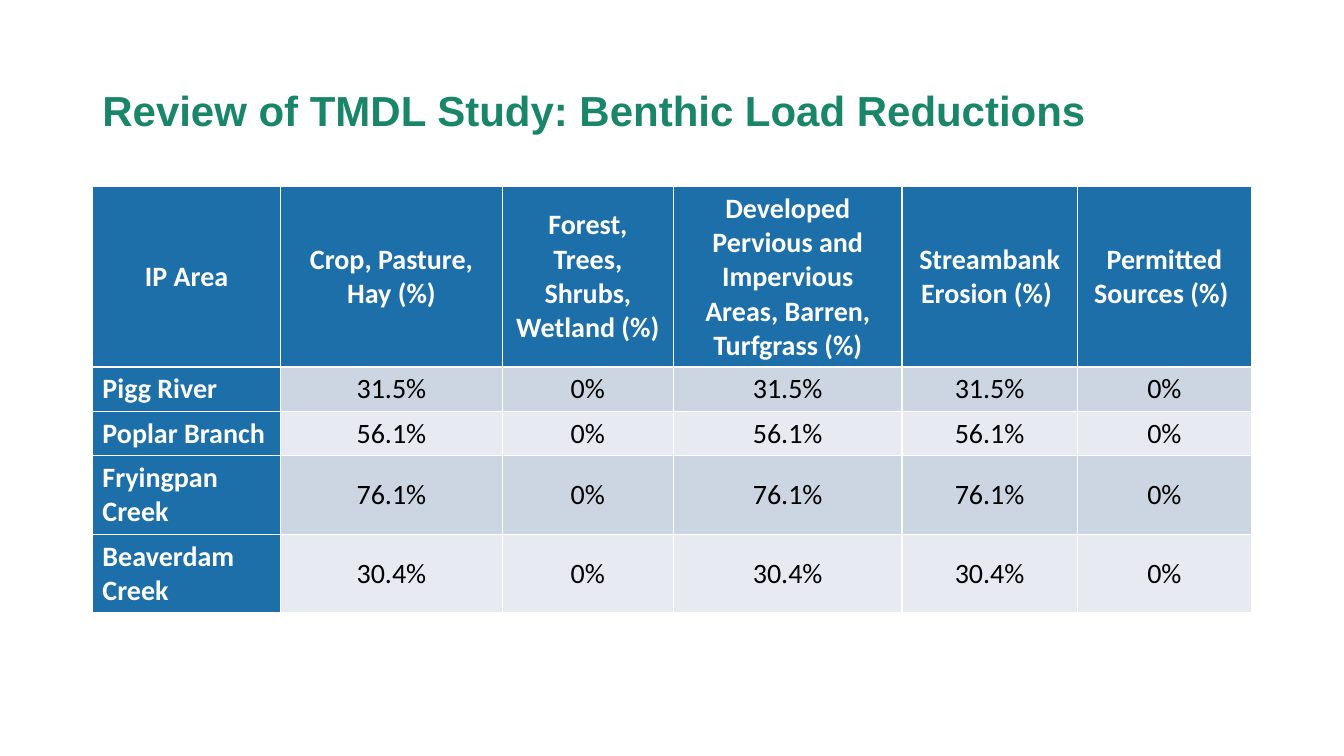
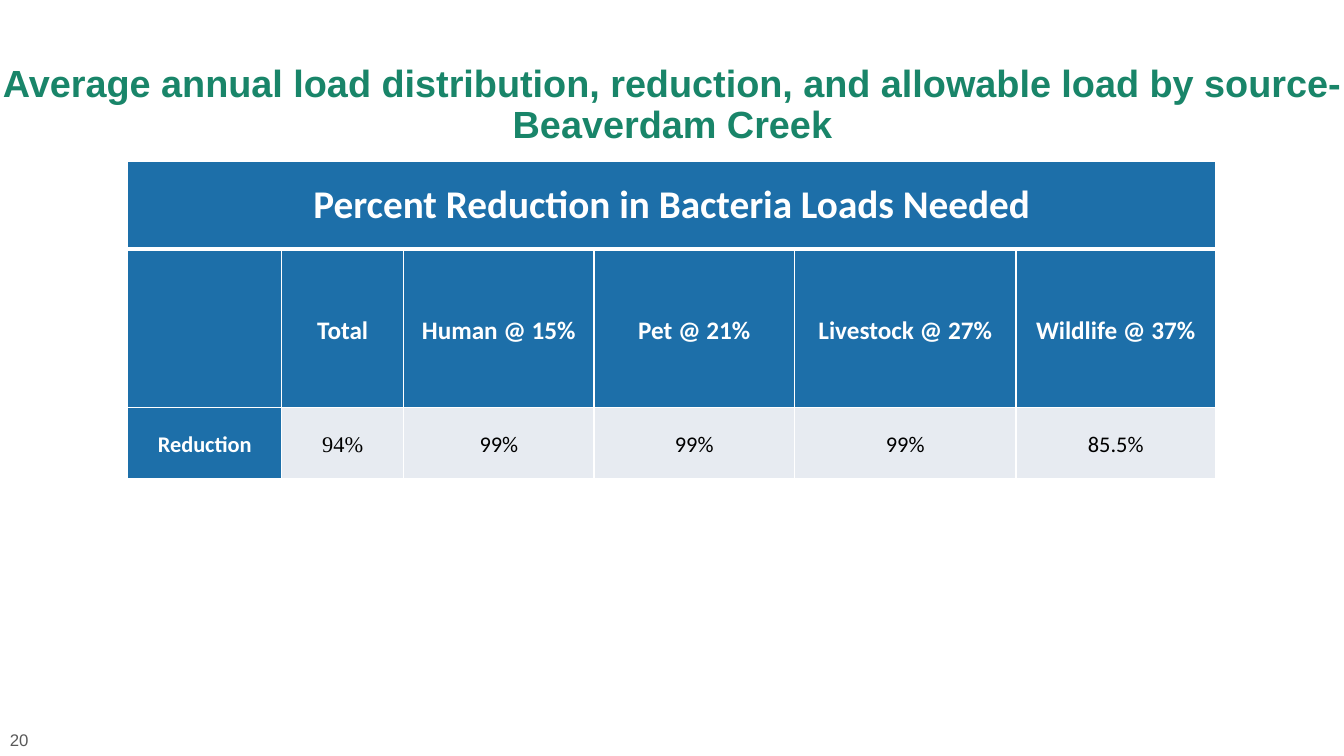
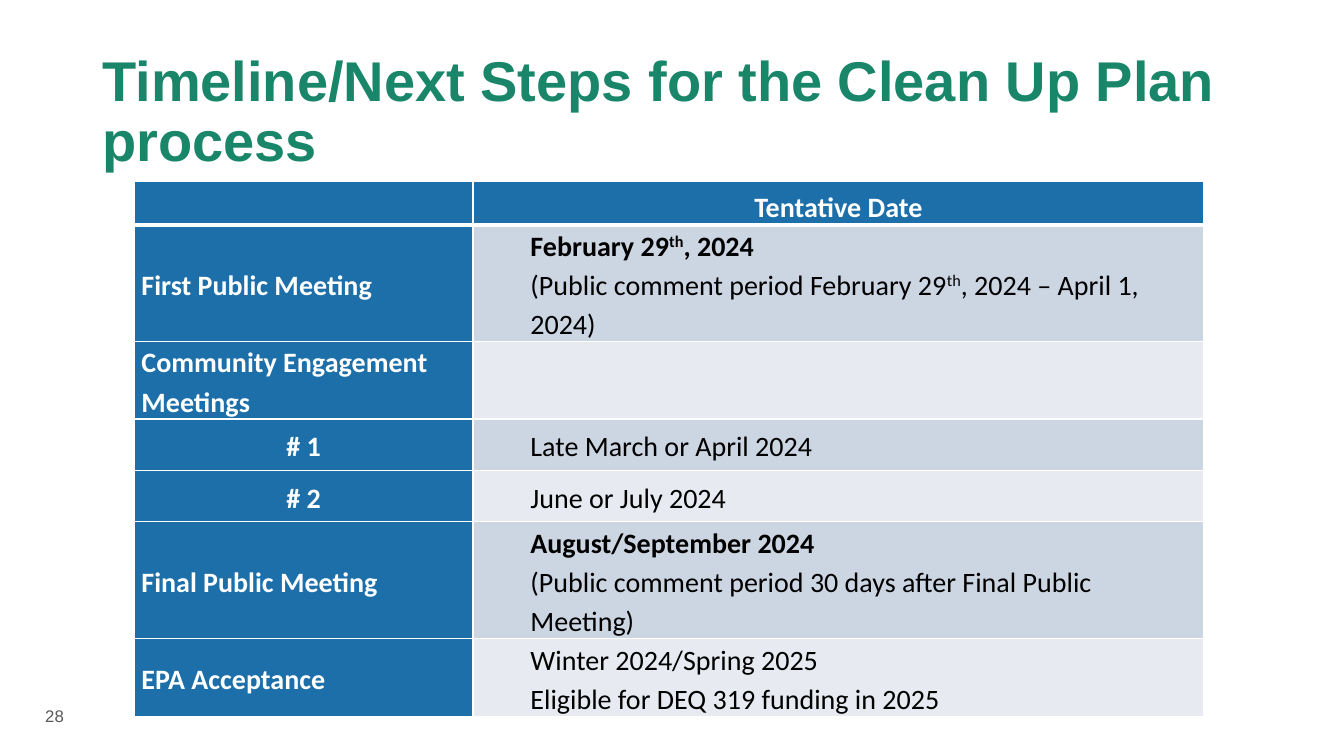
from dataclasses import dataclass

from lxml.etree import SubElement
from pptx import Presentation
from pptx.dml.color import RGBColor
from pptx.enum.text import MSO_ANCHOR, PP_ALIGN
from pptx.oxml.ns import qn
from pptx.util import Emu, Inches, Pt


@dataclass(frozen=True)
class Theme:
    green: str = "198569"
    blue: str = "1D6FA9"
    white: str = "FFFFFF"
    black: str = "000000"
    grey: str = "595959"
    bands: tuple = ("E7EBF1", "CCD5E2")
    head: str = "Arial"
    body: str = "Calibri"
    serif: str = "Times New Roman"
    note: int = 12
    small: int = 16
    label: int = 18
    text: int = 20
    banner: int = 28


T = Theme()
WIDE, HIGH = Inches(13.33), Inches(7.5)
UNIT = WIDE / 160
TITLE = (11, 4.8, 138, 17.4)
LEFT, MID = PP_ALIGN.LEFT, PP_ALIGN.CENTER


def place(box):
    return [Emu(round(side * UNIT)) for side in box]


def style(font, name, size, color, bold):
    font.name, font.size, font.bold = name, Pt(size), bold
    font.color.rgb = RGBColor.from_string(color)


def label(slide, box, text, size, color, bold, align=LEFT):
    frame = slide.shapes.add_textbox(*place(box)).text_frame
    frame.word_wrap = True
    frame.vertical_anchor = MSO_ANCHOR.MIDDLE
    frame.text = text
    for para in frame.paragraphs:
        para.alignment, para.line_spacing = align, 0.9
        for run in para.runs:
            style(run.font, T.head, size, color, bold)


def title(slide, text, size, box=TITLE, align=LEFT):
    label(slide, box, text, size, T.green, True, align)


def number(slide, text, left, top):
    label(slide, (left, top, 138, 5.4), text, T.note, T.grey, False)


def border(cell, widths):
    props = cell._tc.get_or_add_tcPr()
    for spot, (side, width) in enumerate(widths.items()):
        line = SubElement(props, qn("a:ln" + side), w=str(Pt(width)))
        fill = SubElement(line, qn("a:solidFill"))
        SubElement(fill, qn("a:srgbClr"), val=T.white)
        props.insert(spot, line)


def grid(slide, box, cols, rows, heads=1, rule=1):
    left, top, wide, high = place(box)
    table = slide.shapes.add_table(
        len(rows), len(cols), left, top, wide, high).table
    table.first_row = table.horz_banding = False
    for col, part in zip(table.columns, cols):
        col.width = Emu(round(wide * part / sum(cols)))
    for row, part in zip(table.rows, rows):
        row.height = Emu(round(high * part / sum(rows)))
    for r in range(len(rows)):
        for c in range(len(cols)):
            cell = table.cell(r, c)
            dark = r < heads or c == 0
            cell.fill.solid()
            cell.fill.fore_color.rgb = RGBColor.from_string(
                T.blue if dark else T.bands[r % 2])
            border(cell, {"L": 1, "R": 1, "T": rule if r == 1 else 1,
                          "B": rule if r == 0 else 1})
    return table


def write(cell, text, dark, size=T.text, align=MID, lead=1.0, tight=True,
          indent=0, font=T.body):
    cell.vertical_anchor = MSO_ANCHOR.MIDDLE
    if tight:
        cell.margin_left = cell.margin_right = Inches(0.07)
        cell.margin_top = cell.margin_bottom = 0
    frame = cell.text_frame
    frame.text = text
    for para in frame.paragraphs:
        para.alignment, para.line_spacing = align, lead
        if indent:
            para._p.get_or_add_pPr().set("marL", str(Inches(indent)))
        bold = dark or para.text.startswith("*")
        parts = para.text.lstrip("*").split("^")
        para.text = ""
        for spot, part in enumerate(parts):
            run = para.add_run()
            run.text = part
            style(run.font, font, size, T.white if dark else T.black, bold)
            if spot % 2:
                run._r.get_or_add_rPr().set("baseline", "30000")


def loads(slide):
    title(slide, "Review of TMDL Study: Benthic Load Reductions", 30)
    data = [["IP Area", "Crop, Pasture, Hay (%)",
             "Forest, Trees, Shrubs, Wetland (%)",
             "Developed Pervious and Impervious Areas, Barren, Turfgrass (%)",
             "Streambank Erosion (%) ", "Permitted Sources (%) "]]
    for area, cut in (("Pigg River", "31.5%"), ("Poplar Branch", "56.1%"),
                      ("Fryingpan Creek", "76.1%"),
                      ("Beaverdam Creek", "30.4%")):
        data.append([area, cut, "0%", cut, cut, "0%"])
    table = grid(slide, (11, 22.2, 138, 50.8),
                 (1.87, 2.2, 1.7, 2.27, 1.74, 1.73),
                 (1.79, 0.44, 0.44, 0.78, 0.78))
    for r, row in enumerate(data):
        for c, text in enumerate(row):
            write(table.cell(r, c), text, r == 0 or c == 0, tight=False,
                  align=LEFT if r and c == 0 else MID)


def cuts(slide):
    title(slide, "Average annual load distribution, reduction, and allowable "
          "load by source-\vBeaverdam Creek", 27, (-3.7, 7.8, 167.5, 9.5), MID)
    table = grid(slide, (15.2, 19.2, 129.5, 37.8),
                 (1.53, 1.21, 1.89, 1.99, 2.2, 1.98), (0.87, 1.57, 0.7),
                 heads=2, rule=3)
    table.cell(0, 0).merge(table.cell(0, 5))
    write(table.cell(0, 0), "Percent Reduction in Bacteria Loads Needed",
          True, T.banner)
    data = (("", "Total", "Human @ 15%", "Pet @ 21%", "Livestock @ 27%",
             "Wildlife @ 37%"),
            ("Reduction", "94%", "99%", "99%", "99%", "85.5%"))
    for r, (row, size) in enumerate(zip(data, (T.label, T.small)), 1):
        for c, text in enumerate(row):
            write(table.cell(r, c), text, r == 1 or c == 0, size, lead=1.15,
                  font=T.serif if text == "94%" else T.body)
    number(slide, "20", 0, 85.6)


def dates(slide):
    data = (("", "Tentative Date"),
            ("First Public Meeting",
             "*February 29^th^, 2024\n(Public comment period "
             "February 29^th^, 2024 – April 1, 2024)"),
            ("Community Engagement Meetings", ""),
            ("# 1", "Late March or April 2024"),
            ("# 2", "June or July 2024"),
            ("Final Public Meeting",
             "*August/September 2024\n(Public comment period 30 days "
             "after Final Public Meeting)"),
            ("EPA Acceptance", "Winter 2024/Spring 2025\n"
             "Eligible for DEQ 319 funding in 2025"))
    table = grid(slide, (16, 21.6, 127.3, 63.7), (3.36, 7.25),
                 (0.43, 1.16, 0.77, 0.51, 0.51, 1.16, 0.77), rule=3)
    for r, (step, date) in enumerate(data):
        write(table.cell(r, 0), step, True, lead=1.14,
              align=MID if step.startswith("#") else LEFT)
        write(table.cell(r, 1), date, r == 0, lead=1.14,
              align=LEFT if r else MID, indent=0.5 if r else 0)
    table.cell(0, 1).vertical_anchor = MSO_ANCHOR.BOTTOM
    title(slide, "Timeline/Next Steps for the Clean Up Plan process", 40)
    number(slide, "28", 4.2, 82.7)


def main():
    deck = Presentation()
    deck.slide_width, deck.slide_height = WIDE, HIGH
    for build in (loads, cuts, dates):
        build(deck.slides.add_slide(deck.slide_layouts[6]))
    deck.save("out.pptx")


if __name__ == "__main__":
    main()
